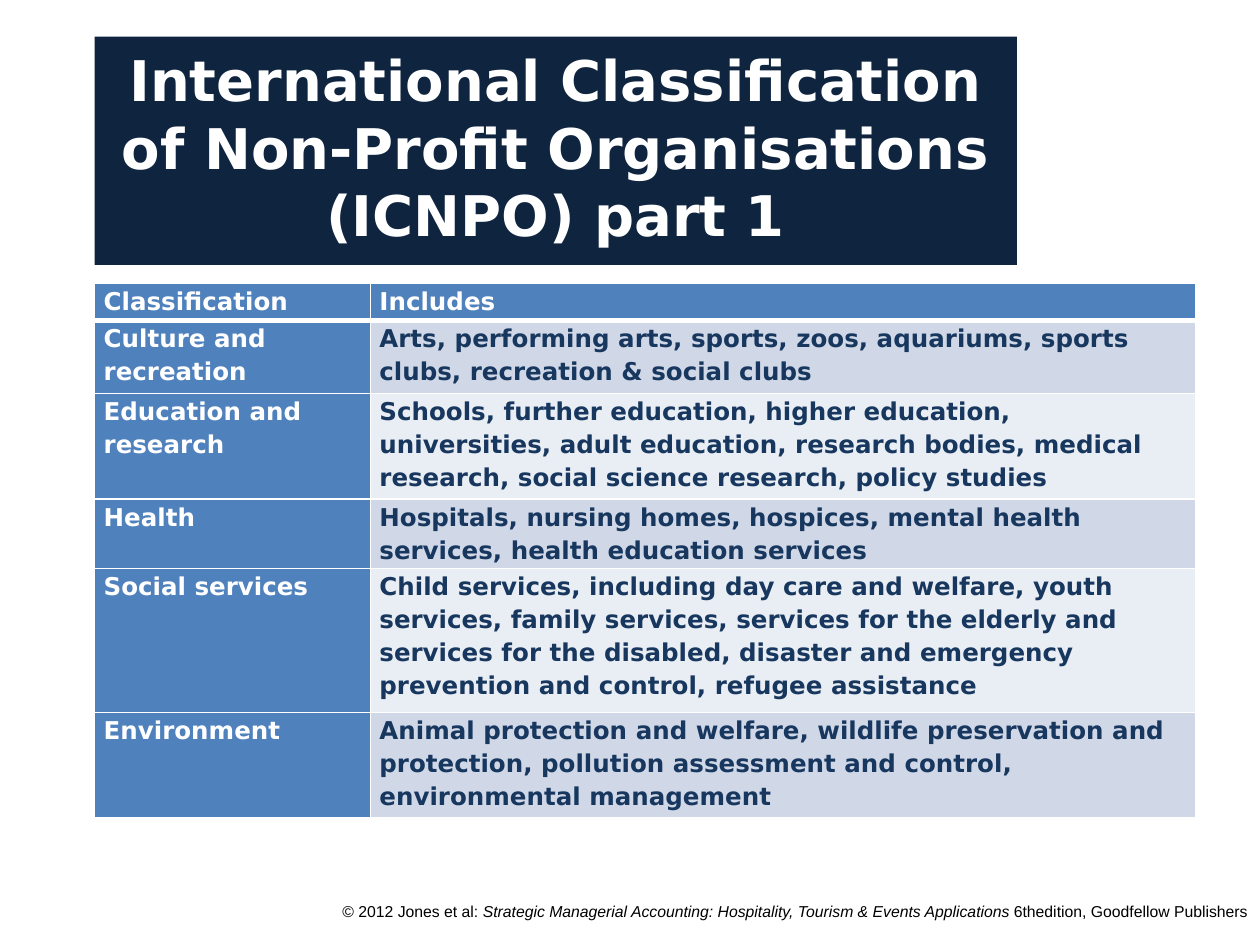
from lxml.etree import SubElement
from pptx import Presentation
from pptx.dml.color import RGBColor
from pptx.enum.shapes import MSO_SHAPE as Shape
from pptx.enum.text import MSO_ANCHOR as Anchor, PP_ALIGN as Align
from pptx.oxml.ns import qn
from pptx.util import Cm, Pt

TITLE = "International Classification of Non-Profit Organisations (ICNPO) part 1"
FOOTER = [
    ("© 2012 Jones et al: ", False),
    ("Strategic Managerial Accounting: Hospitality, Tourism & Events Applications ", True),
    ("6thedition, Goodfellow Publishers", False),
]
ROWS = [
    (0.74, "Classification", "Includes"),
    (1.47, "Culture and recreation",
     "Arts, performing arts, sports, zoos, aquariums, sports clubs, recreation & social clubs"),
    (2.13, "Education and research",
     "Schools, further education, higher education, universities, adult education, "
     "research bodies, medical research, social science research, policy studies"),
    (1.4, "Health",
     "Hospitals, nursing homes, hospices, mental health services, health education services"),
    (2.9, "Social services",
     "Child services, including day care and welfare, youth services, family services, "
     "services for the elderly and services for the disabled, disaster and emergency "
     "prevention and control, refugee assistance"),
    (2.13, "Environment",
     "Animal protection and welfare, wildlife preservation and protection, "
     "pollution assessment and control, environmental management"),
]
COLUMNS = [5.56, 16.64]
LEFT = 1.91
FONT = "DejaVu Sans"
NAVY, BLUE, INK, WHITE, BLACK = "0F243E", "4F81BD", "17375E", "FFFFFF", "000000"
BANDS = ["E9EDF4", "D0D8E8"]


def color(value):
    return RGBColor.from_string(value)


def add_run(paragraph, text, size, font, ink, bold=False, italic=False):
    run = paragraph.add_run()
    run.text = text
    run.font.size = Pt(size)
    run.font.name = font
    run.font.bold = bold
    run.font.italic = italic
    run.font.color.rgb = color(ink)


def set_fill(target, value):
    target.fill.solid()
    target.fill.fore_color.rgb = color(value)


def add_borders(cell, widths):
    properties = cell._tc.get_or_add_tcPr()
    for side, width in zip("LRTB", widths):
        line = SubElement(properties, qn(f"a:ln{side}"), w=str(Pt(width)))
        fill = SubElement(line, qn("a:solidFill"))
        SubElement(fill, qn("a:srgbClr"), val=WHITE)


def add_title(slide):
    shape = slide.shapes.add_shape(Shape.RECTANGLE, Cm(LEFT), Cm(0.74), Cm(18.59), Cm(4.6))
    shape.shadow.inherit = False
    set_fill(shape, NAVY)
    shape.line.fill.background()
    frame = shape.text_frame
    frame.word_wrap = True
    frame.vertical_anchor = Anchor.MIDDLE
    frame.margin_bottom = Cm(0.29)
    paragraph = frame.paragraphs[0]
    paragraph.alignment = Align.CENTER
    add_run(paragraph, TITLE, 32, FONT, WHITE, bold=True)


def add_footer(slide):
    frame = slide.shapes.add_textbox(Cm(5.66), Cm(18.06), Cm(19.74), Cm(0.99)).text_frame
    frame.word_wrap = True
    paragraph = frame.paragraphs[0]
    paragraph.alignment = Align.RIGHT
    for text, italic in FOOTER:
        add_run(paragraph, text, 9, "Arial", BLACK, italic=italic)


def add_classification(slide):
    height = sum(row[0] for row in ROWS)
    table = slide.shapes.add_table(len(ROWS), len(COLUMNS), Cm(LEFT), Cm(5.72),
                                   Cm(sum(COLUMNS)), Cm(height)).table
    for column, width in zip(table.columns, COLUMNS):
        column.width = Cm(width)
    for row_index, (row_height, *texts) in enumerate(ROWS):
        table.rows[row_index].height = Cm(row_height)
        for column_index, text in enumerate(texts):
            heading = row_index == 0 or column_index == 0
            cell = table.cell(row_index, column_index)
            cell.margin_left = cell.margin_right = Cm(0.18)
            cell.margin_top = cell.margin_bottom = 0
            add_borders(cell, (1, 1, 3 if row_index == 1 else 1, 3 if row_index == 0 else 1))
            set_fill(cell, BLUE if heading else BANDS[row_index % 2])
            paragraph = cell.text_frame.paragraphs[0]
            paragraph.line_spacing = 1.15
            add_run(paragraph, text, 14, FONT, WHITE if heading else INK, bold=True)


def main():
    presentation = Presentation()
    presentation.slide_width, presentation.slide_height = Cm(25.4), Cm(19.05)
    slide = presentation.slides.add_slide(presentation.slide_layouts[6])
    add_footer(slide)
    add_title(slide)
    add_classification(slide)
    presentation.save("out.pptx")


if __name__ == "__main__":
    main()
